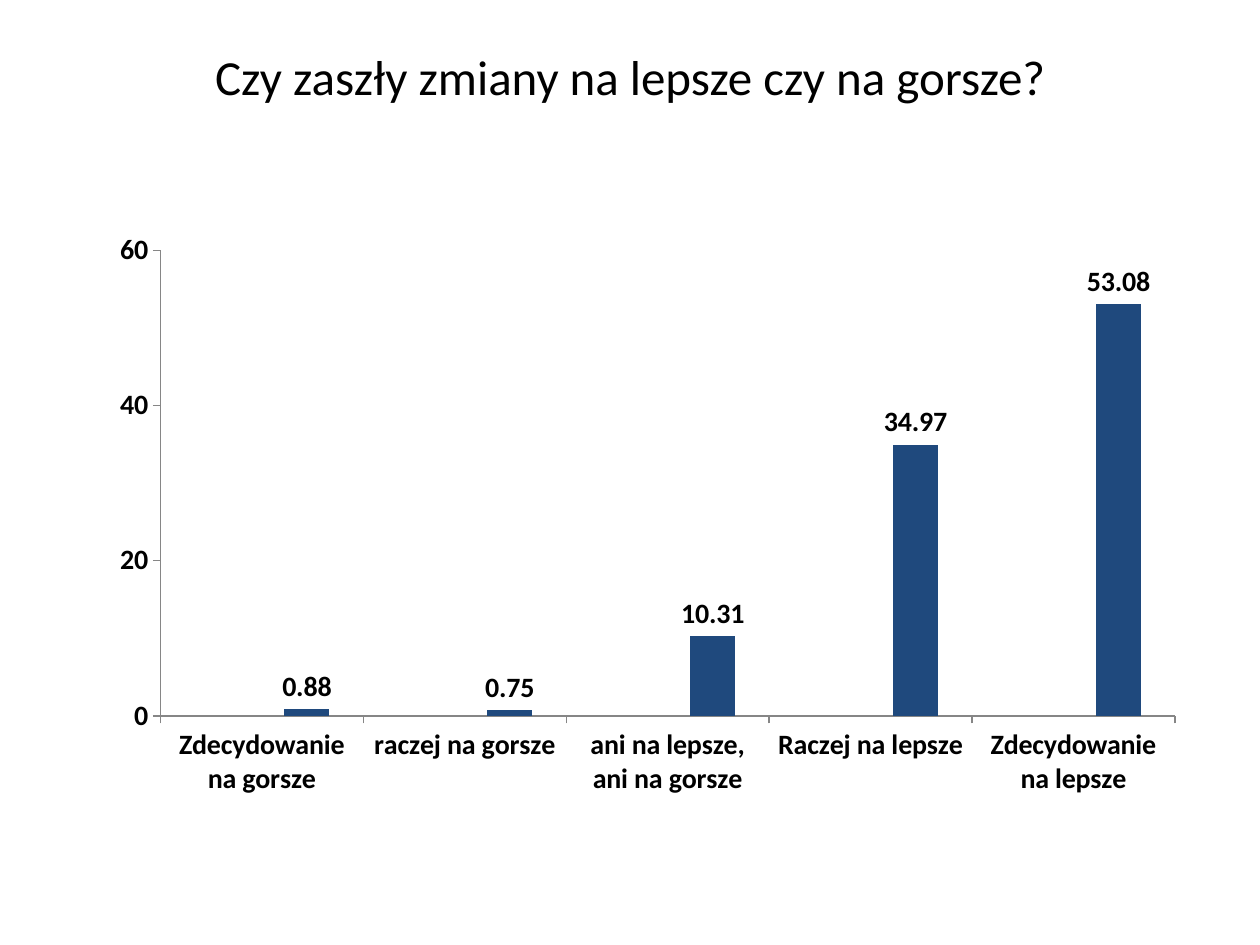
"""Build a slide with a titled column chart of survey answers."""
from dataclasses import dataclass
from typing import Any, Optional

from lxml import etree
from pptx import Presentation
from pptx.chart.data import CategoryChartData
from pptx.dml.color import RGBColor
from pptx.enum.chart import XL_CHART_TYPE, XL_LABEL_POSITION, XL_TICK_MARK
from pptx.enum.text import MSO_ANCHOR, PP_ALIGN
from pptx.oxml.ns import qn
from pptx.util import Cm, Pt

COLUMN = XL_CHART_TYPE.COLUMN_CLUSTERED
OUTSIDE_END = XL_LABEL_POSITION.OUTSIDE_END
TICK_OUT = XL_TICK_MARK.OUTSIDE
TICK_NONE = XL_TICK_MARK.NONE
MIDDLE = MSO_ANCHOR.MIDDLE
CENTER = PP_ALIGN.CENTER

TITLE = "Czy zaszły zmiany na lepsze czy na gorsze?"
CATEGORIES = [
    "Zdecydowanie na gorsze",
    "raczej na gorsze",
    "ani na lepsze, ani na gorsze",
    "Raczej na lepsze",
    "Zdecydowanie na lepsze",
]
TITLE_FONT = {"name": "Calibri", "size": Pt(28)}
CHART_FONT = {"name": "Calibri", "size": Pt(10)}
LABEL_FONT = {"name": "Calibri", "size": Pt(16), "bold": True}
PLOT_LAYOUT = {
    "layoutTarget": "inner", "xMode": "edge", "yMode": "edge",
    "x": 0.06, "y": 0.05, "w": 0.92, "h": 0.79,
}


@dataclass
class Box:
    left: float
    top: float
    width: float
    height: float

    def lengths(self) -> tuple:
        return tuple(Cm(v) for v in (self.left, self.top, self.width, self.height))


@dataclass
class Series:
    name: str
    values: list[Optional[float]]
    color: str
    labelled: bool = False


NO_VALUES = [None] * len(CATEGORIES)
SERIES = [
    Series("Series 1", NO_VALUES, "4F81BD"),
    Series("Series 2", NO_VALUES, "C0504D"),
    Series("Series 3", [0.88, 0.75, 10.31, 34.97, 53.08], "1F497D", True),
]


def set_color(color_format: Any, value: str) -> None:
    color_format.rgb = RGBColor.from_string(value)


def set_font(font: Any, formats: dict) -> None:
    for name, value in formats.items():
        setattr(font, name, value)
    set_color(font.color, "000000")


def add_title(s: Any, box: Box, text: str) -> None:
    tf = s.shapes.add_textbox(*box.lengths()).text_frame
    tf.word_wrap = True
    tf.vertical_anchor = MIDDLE
    p = tf.paragraphs[0]
    p.alignment = CENTER
    r = p.add_run()
    r.text = text
    set_font(r.font, TITLE_FONT)


def format_axis(axis: Any) -> None:
    axis.has_major_gridlines = False
    axis.major_tick_mark = TICK_OUT
    axis.minor_tick_mark = TICK_NONE
    set_font(axis.tick_labels.font, LABEL_FONT)
    axis.format.line.width = Pt(0.75)
    set_color(axis.format.line.color, "868686")


def format_series(plot_series: Any, series: Series) -> None:
    fill = plot_series.format.fill
    fill.solid()
    set_color(fill.fore_color, series.color)
    plot_series.invert_if_negative = False
    if series.labelled:
        labels = plot_series.data_labels
        labels.show_value = True
        labels.number_format = "0.00"
        labels.number_format_is_linked = False
        labels.position = OUTSIDE_END
        set_font(labels.font, LABEL_FONT)


def place_plot(chart: Any) -> None:
    area = chart.element.find(".//" + qn("c:plotArea"))
    for old in area.findall(qn("c:layout")):
        area.remove(old)
    layout = etree.Element(qn("c:layout"))
    manual = etree.SubElement(layout, qn("c:manualLayout"))
    for tag, value in PLOT_LAYOUT.items():
        etree.SubElement(manual, qn(f"c:{tag}")).set("val", str(value))
    area.insert(0, layout)


def add_answer_chart(s: Any, box: Box) -> None:
    data = CategoryChartData()
    data.categories = CATEGORIES
    for series in SERIES:
        data.add_series(series.name, series.values)
    chart = s.shapes.add_chart(COLUMN, *box.lengths(), data).chart
    chart.has_legend = False
    chart.has_title = False
    set_font(chart.font, CHART_FONT)
    for axis in (chart.category_axis, chart.value_axis):
        format_axis(axis)
    scale = {"minimum_scale": 0, "maximum_scale": 60, "major_unit": 20}
    for name, value in scale.items():
        setattr(chart.value_axis, name, value)
    plot = chart.plots[0]
    plot.gap_width = 150
    plot.overlap = 0
    plot.vary_by_categories = False
    for plot_series, series in zip(plot.series, SERIES):
        format_series(plot_series, series)
    place_plot(chart)


def main() -> None:
    prs = Presentation()
    prs.slide_width, prs.slide_height = Cm(25.4), Cm(19.05)
    s = prs.slides.add_slide(prs.slide_layouts[6])
    add_title(s, Box(1.27, 0.76, 22.86, 1.55), TITLE)
    add_answer_chart(s, Box(1.9, 4.45, 22.23, 11.89))
    prs.save("out.pptx")


if __name__ == "__main__":
    main()
